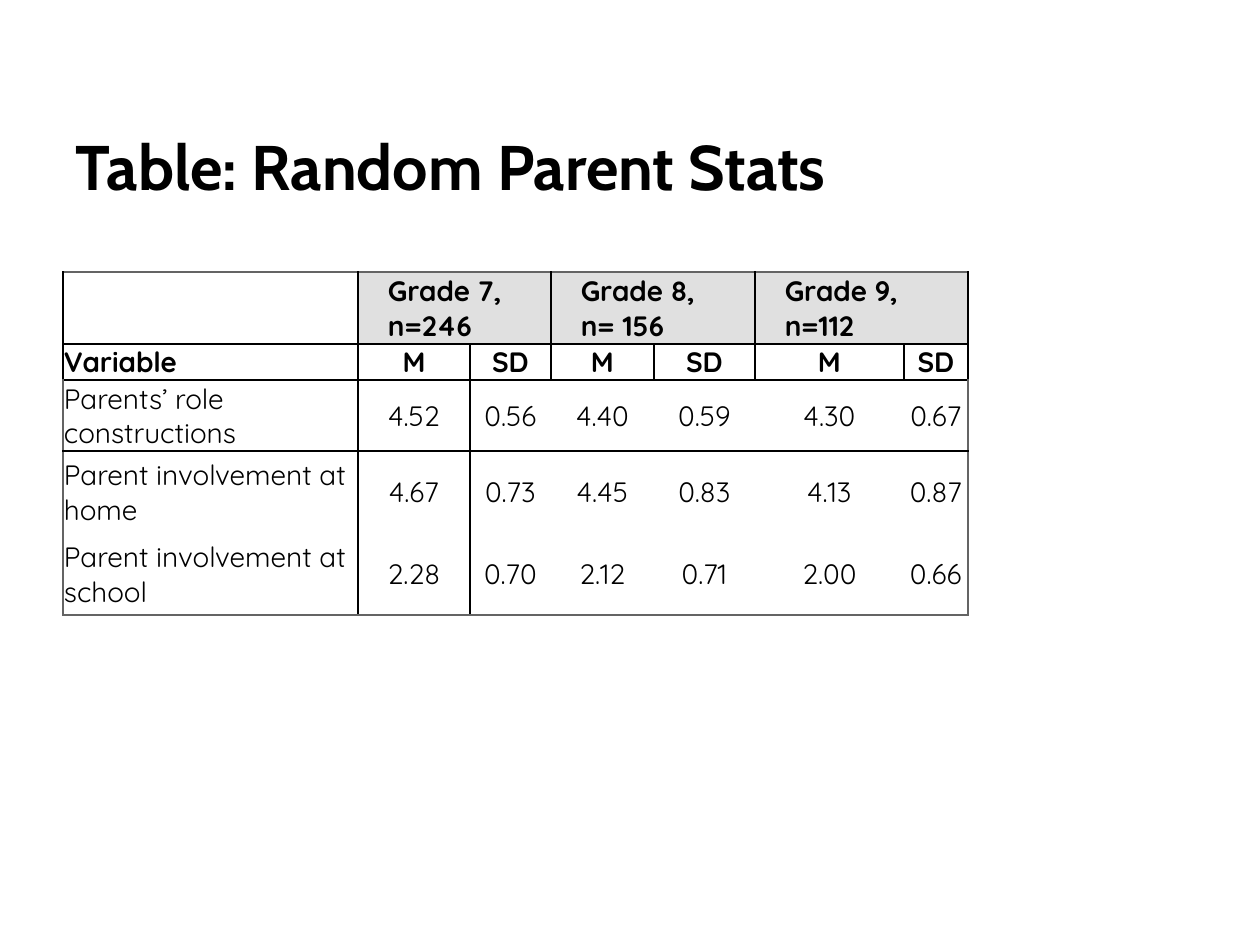
from typing import NamedTuple, Optional

from lxml.etree import SubElement
from pptx import Presentation
from pptx.dml.color import RGBColor
from pptx.enum.text import MSO_ANCHOR, PP_ALIGN
from pptx.oxml.ns import qn
from pptx.util import Emu, Pt

COLORS = {"text": "000000", "line": "000000", "outline": "646464",
          "header": "E0E0E0", "paper": "FFFFFF"}
PIXELS_PER_INCH = 126

# Table content and grid
GRADES = ["Grade 7, n=246", "Grade 8, \vn= 156", "Grade 9, \vn=112"]
ROWS = [
    ["Variable"] + ["M", "SD"] * len(GRADES),
    ["Parents’ role constructions", "4.52", "0.56", "4.40", "0.59", "4.30", "0.67"],
    ["Parent involvement at home", "4.67", "0.73", "4.45", "0.83", "4.13", "0.87"],
    ["Parent involvement at school", "2.28", "0.70", "2.12", "0.71", "2.00", "0.66"],
]
COLUMN_WIDTHS = [295, 112, 81, 103, 101, 149, 64]
ROW_HEIGHTS = [72, 36, 71, 82, 82]
HEADING_ROWS = 2


class Box(NamedTuple):
    left: int
    top: int
    width: int
    height: int


class TextStyle(NamedTuple):
    font: str
    size: int
    bold: bool
    align: PP_ALIGN = PP_ALIGN.LEFT


def px(length: int) -> Emu:
    return Emu(round(length * 914400 / PIXELS_PER_INCH))


def format_text(text_frame, style: TextStyle) -> None:
    for paragraph in text_frame.paragraphs:
        paragraph.alignment = style.align
        for run in paragraph.runs:
            run.font.name = style.font
            run.font.size = Pt(style.size)
            run.font.bold = style.bold
            run.font.color.rgb = RGBColor.from_string(COLORS["text"])


def add_title(slide, box: Box, text: str) -> None:
    shape = slide.shapes.add_textbox(*map(px, box))
    text_frame = shape.text_frame
    text_frame.word_wrap = True
    text_frame.vertical_anchor = MSO_ANCHOR.BOTTOM
    text_frame.text = text
    format_text(text_frame, TextStyle("Cabin", 36, True))


def horizontal_edge(edge: int) -> Optional[str]:
    if edge in (0, len(ROW_HEIGHTS)):
        return "outline"
    return "line" if edge <= HEADING_ROWS + 1 else None


def vertical_edge(row: int, edge: int) -> Optional[str]:
    if edge in (0, len(COLUMN_WIDTHS)):
        return "line" if row < HEADING_ROWS else "outline"
    if row == 0:
        return "line" if edge % 2 else None
    return "line" if edge <= 2 or row < HEADING_ROWS else None


def set_borders(cell, row: int, column: int) -> None:
    last_edge = column + (cell.span_width if cell.is_merge_origin else 1)
    edges = {"a:lnL": vertical_edge(row, column),
             "a:lnR": vertical_edge(row, last_edge),
             "a:lnT": horizontal_edge(row),
             "a:lnB": horizontal_edge(row + 1)}
    properties = cell._tc.get_or_add_tcPr()
    for position, (tag, color) in enumerate(edges.items()):
        line = SubElement(properties, qn(tag), w=str(Pt(1)))
        properties.insert(position, line)
        if color:
            fill = SubElement(line, qn("a:solidFill"))
            SubElement(fill, qn("a:srgbClr"), val=COLORS[color])
        else:
            SubElement(line, qn("a:noFill"))


def format_cell(cell, row: int, column: int) -> None:
    grade_heading = row == 0 and column > 0
    cell.fill.solid()
    fill_name = "header" if grade_heading else "paper"
    cell.fill.fore_color.rgb = RGBColor.from_string(COLORS[fill_name])
    cell.vertical_anchor = MSO_ANCHOR.MIDDLE
    cell.margin_left = px(30 if grade_heading else 1)
    cell.margin_top = cell.margin_right = px(1)
    cell.margin_bottom = 0
    centered = row > 0 and column > 0
    align = PP_ALIGN.CENTER if centered else PP_ALIGN.LEFT
    format_text(cell.text_frame, TextStyle("Quicksand", 16, row < HEADING_ROWS, align))
    set_borders(cell, row, column)


def add_stats_table(slide, left: int, top: int) -> None:
    box = Box(left, top, sum(COLUMN_WIDTHS), sum(ROW_HEIGHTS))
    table = slide.shapes.add_table(
        len(ROW_HEIGHTS), len(COLUMN_WIDTHS), *map(px, box)).table
    table.first_row = table.horz_banding = False
    for column, width in zip(table.columns, COLUMN_WIDTHS):
        column.width = px(width)
    for row, height in zip(table.rows, ROW_HEIGHTS):
        row.height = px(height)

    # Each grade heading spans its M and SD columns
    for index, grade in enumerate(GRADES):
        column = 1 + 2 * index
        table.cell(0, column).merge(table.cell(0, column + 1))
        table.cell(0, column).text_frame.text = grade
    for row, values in enumerate(ROWS, start=1):
        for column, value in enumerate(values):
            table.cell(row, column).text_frame.text = value

    for row in range(len(ROW_HEIGHTS)):
        for column in range(len(COLUMN_WIDTHS)):
            format_cell(table.cell(row, column), row, column)


def main() -> None:
    presentation = Presentation()
    presentation.slide_width = px(1260)
    presentation.slide_height = px(945)
    slide = presentation.slides.add_slide(presentation.slide_layouts[6])
    add_title(slide, Box(63, 52, 994, 157), "Table: Random Parent Stats")
    add_stats_table(slide, 63, 272)
    presentation.save("out.pptx")


if __name__ == "__main__":
    main()
